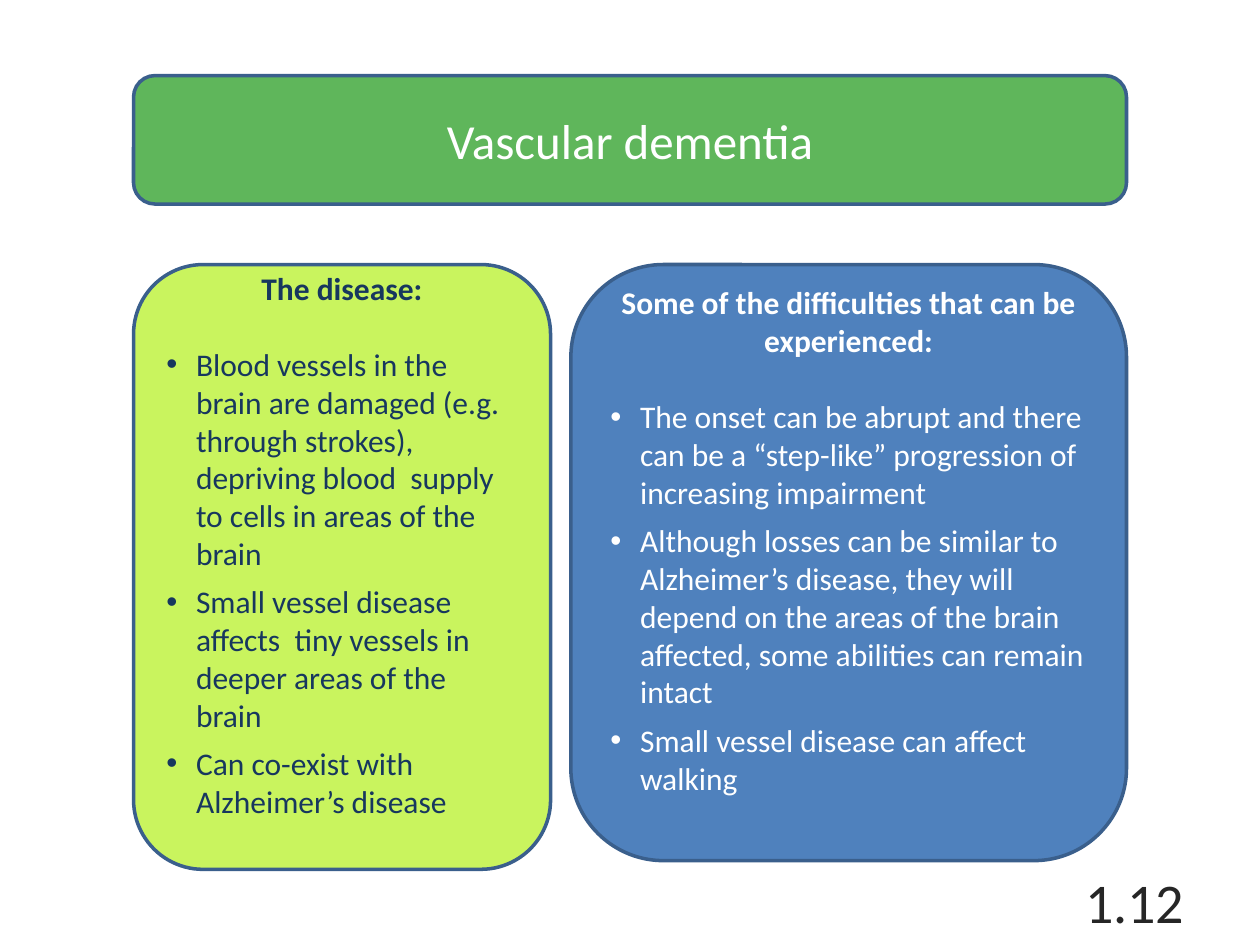
from dataclasses import dataclass

import pptx
import pptx.dml.color
import pptx.enum.shapes
import pptx.enum.text
import pptx.oxml
import pptx.oxml.ns
import pptx.util

Pt = pptx.util.Pt
Align = pptx.enum.text.PP_ALIGN
FONT = "Calibri"
OUTLINE = "3A5F8C"
WHITE = "FFFFFF"
BODY_SIZE = 18
LINE_HEIGHT = 22
BULLET_INDENT = 17


@dataclass(frozen=True)
class Box:
    left: float
    top: float
    width: float
    height: float


@dataclass(frozen=True)
class Panel:
    box: Box
    fill: str
    text_color: str
    heading: str
    bullets: tuple[str, ...]


BANNER = Box(76.3, 43.2, 567.4, 73.4)
PAGE_NUMBER = Box(516.2, 500.4, 167.8, 28.8)
PANELS = (
    Panel(
        Box(76.3, 151.2, 238.3, 345.6), "C9F45E", "17375E", "The disease:",
        (
            "Blood vessels in the brain are damaged (e.g. through strokes), "
            "depriving blood  supply to cells in areas of the brain",
            "Small vessel disease affects  tiny vessels in deeper areas of the brain",
            "Can co-exist with Alzheimer’s disease",
        ),
    ),
    Panel(
        Box(326.2, 151.2, 317.5, 340.6), "4F81BD", WHITE,
        "Some of the difficulties that can be experienced:",
        (
            "The onset can be abrupt and there can be a “step-like” "
            "progression of increasing impairment",
            "Although losses can be similar to Alzheimer’s disease, they will depend on "
            "the areas of the brain affected, some abilities can remain intact",
            "Small vessel disease can affect walking",
        ),
    ),
)


def rgb(color: str) -> pptx.dml.color.RGBColor:
    return pptx.dml.color.RGBColor.from_string(color)


def place(shape, box: Box) -> None:
    shape.left, shape.top = Pt(box.left), Pt(box.top)
    shape.width, shape.height = Pt(box.width), Pt(box.height)


def prepare_frame(shape):
    frame = shape.text_frame
    frame.word_wrap = True
    frame.auto_size = pptx.enum.text.MSO_AUTO_SIZE.NONE
    frame.vertical_anchor = pptx.enum.text.MSO_ANCHOR.MIDDLE
    return frame


def add_bullet(paragraph) -> None:
    properties = paragraph._p.get_or_add_pPr()
    properties.set("marL", str(Pt(BULLET_INDENT)))
    properties.set("indent", str(-Pt(BULLET_INDENT)))
    namespace = pptx.oxml.ns.nsdecls("a")
    properties.append(pptx.oxml.parse_xml(f'<a:buFont {namespace} typeface="Arial"/>'))
    properties.append(pptx.oxml.parse_xml(f'<a:buChar {namespace} char="•"/>'))


def write(paragraph, text: str, *, size: float, color: str, bold: bool = False,
          align=Align.LEFT, space_after: float = 0, bullet: bool = False) -> None:
    paragraph.alignment = align
    paragraph.space_before = Pt(0)
    paragraph.space_after = Pt(space_after)
    if bullet:
        add_bullet(paragraph)
    run = paragraph.add_run()
    run.text = text
    run.font.name = FONT
    run.font.size = Pt(size)
    run.font.bold = bold
    run.font.color.rgb = rgb(color)


def add_rounded_box(slide, box: Box, fill: str):
    shape = slide.shapes.add_shape(
        pptx.enum.shapes.MSO_SHAPE.ROUNDED_RECTANGLE,
        Pt(box.left), Pt(box.top), Pt(box.width), Pt(box.height))
    shape.shadow.inherit = False
    shape.fill.solid()
    shape.fill.fore_color.rgb = rgb(fill)
    shape.line.color.rgb = rgb(OUTLINE)
    shape.line.width = Pt(2)
    return shape


def add_title(slide, text: str) -> None:
    add_rounded_box(slide, BANNER, "5FB65B")
    title = slide.shapes.title
    place(title, BANNER)
    slide.shapes.element.append(title.element)
    write(prepare_frame(title).paragraphs[0], text, size=28, color=WHITE, align=Align.CENTER)


def add_panel(slide, panel: Panel) -> None:
    frame = prepare_frame(add_rounded_box(slide, panel.box, panel.fill))
    frame.margin_top, frame.margin_bottom = Pt(0), Pt(26)
    write(frame.paragraphs[0], panel.heading, size=BODY_SIZE, color=panel.text_color,
          bold=True, align=Align.CENTER, space_after=LINE_HEIGHT)
    for bullet in panel.bullets:
        write(frame.add_paragraph(), bullet, size=BODY_SIZE, color=panel.text_color,
              space_after=6, bullet=True)


def add_page_number(slide, text: str) -> None:
    text_box = slide.shapes.add_textbox(0, 0, 0, 0)
    place(text_box, PAGE_NUMBER)
    write(prepare_frame(text_box).paragraphs[0], text, size=32, color="262626",
          align=Align.RIGHT)


def main() -> None:
    presentation = pptx.Presentation()
    presentation.slide_width, presentation.slide_height = Pt(720), Pt(540)
    slide = presentation.slides.add_slide(presentation.slide_layouts.get_by_name("Title Only"))
    add_title(slide, "Vascular dementia")
    for panel in PANELS:
        add_panel(slide, panel)
    add_page_number(slide, "1.12")
    presentation.save("out.pptx")


if __name__ == "__main__":
    main()
